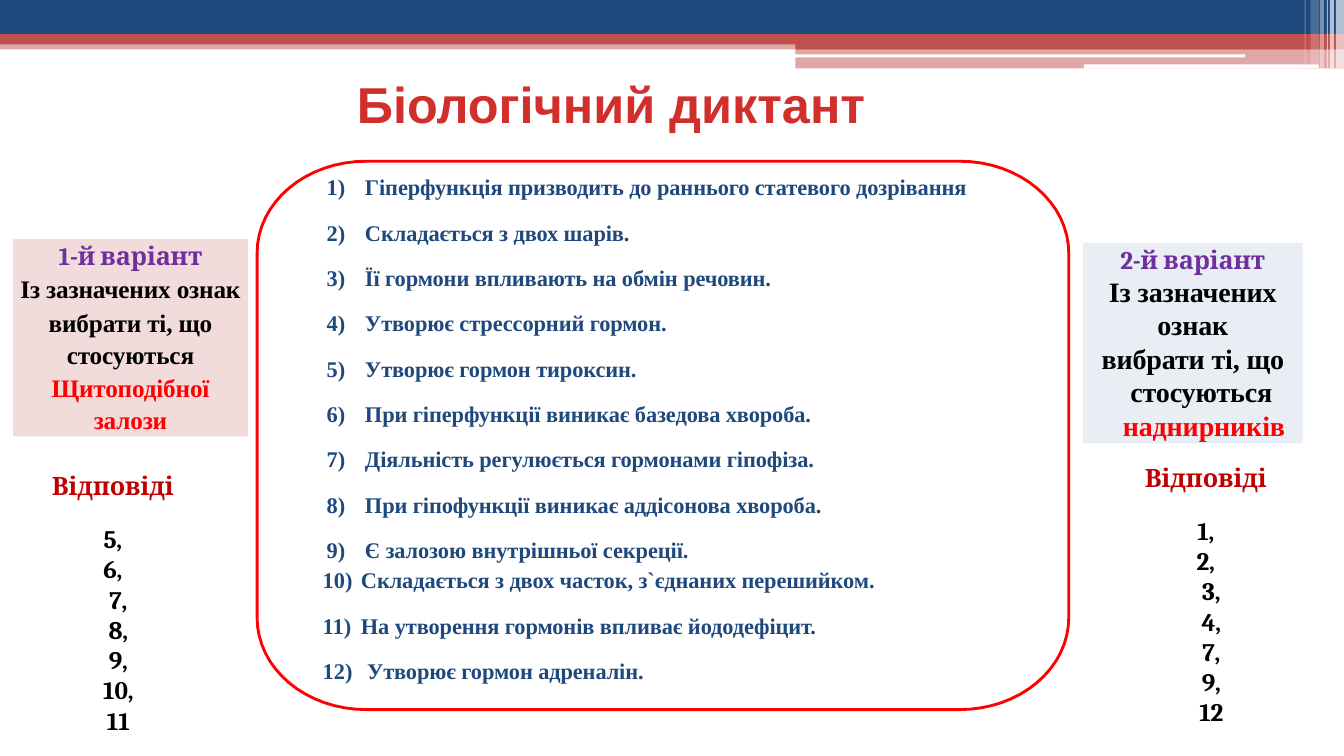
"""Build the biology dictation slide with two variants and their answers."""
from math import cos, pi, sin

from lxml.etree import SubElement
from pptx import Presentation
from pptx.dml.color import RGBColor as RGB
from pptx.enum.shapes import MSO_SHAPE as SHAPE
from pptx.enum.text import MSO_ANCHOR as ANCHOR, PP_ALIGN as ALIGN
from pptx.oxml.ns import qn
from pptx.util import Inches, Pt

THEME = {
    "navy": "1F497D", "brick": "C0504D", "white": "FFFFFF", "black": "000000",
    "red": "FF0000", "title": "D02F2C", "violet": "6F2F9F", "answer": "C00000",
    "pink": "F2DCDB", "ice": "E9EDF4",
    "serif": "Times New Roman", "cambria": "Cambria", "sans": "Arial",
    "big": 36, "mid": 20, "body": 18, "small": 16,
}

TITLE = "Біологічний диктант"
STATEMENTS = [
    "Гіперфункція призводить до раннього статевого дозрівання",
    "Складається з двох шарів.",
    "Її гормони впливають на обмін речовин.",
    "Утворює стрессорний гормон.",
    "Утворює гормон тироксин.",
    "При гіперфункції виникає базедова хвороба.",
    "Діяльність регулюється гормонами гіпофіза.",
    "При гіпофункції виникає аддісонова хвороба.",
    "Є залозою внутрішньої секреції.",
    "Складається з двох часток, з`єднаних перешийком.",
    "На утворення гормонів впливає йододефіцит.",
    "Утворює гормон адреналін.",
]
LISTS = [(1, 9, (3.23, 1.71, 7.19, 3.9)), (10, 12, (3.19, 5.61, 6.19, 1.19))]

VARIANTS = [
    {"name": "1-й варіант", "box": (0.13, 2.37, 2.33, 1.96), "fill": "pink", "size": "body",
     "task": [("Із зазначених ознак", 24, 0), ("вибрати ті, що", 24, 0), ("стосуються", 23.2, 0)],
     "gland": [("Щитоподібної", 23.2, 0), ("залози", 23.2, 0)],
     "answers": ["5,", "6,", "7,", "8,", "9,", "10,", "11"],
     "answer_box": (0.41, 4.62, 1.42, 2.7)},
    {"name": "2-й варіант", "box": (10.74, 2.41, 2.18, 1.99), "fill": "ice", "size": "mid",
     "task": [("Із зазначених", 23.9, 0), ("ознак", None, 0), ("вибрати ті, що", None, 0),
              ("стосуються", None, 0.17)],
     "gland": [("наднирників", None, 0.22)],
     "answers": ["1,", "2,", "3,", "4,", "7,", "9,", "12"],
     "answer_box": (11.25, 4.54, 1.42, 2.7)},
]

BARS = [
    (SHAPE.RECTANGLE, (0, 0.4, 13.33, 0.09), "brick", 50),
    (SHAPE.RECTANGLE, (0, 0, 13.33, 0.34), "navy", 100),
    (SHAPE.RECTANGLE, (0, 0.34, 13.33, 0.1), "brick", 100),
    (SHAPE.RECTANGLE, (7.89, 0.39, 5.44, 0.1), "brick", 100),
    (SHAPE.RECTANGLE, (7.89, 0.48, 5.44, 0.2), "brick", 50),
    (SHAPE.ROUNDED_RECTANGLE, (7.88, 0.54, 4.47, 0.03), "white", 100),
    (SHAPE.ROUNDED_RECTANGLE, (10.75, 0.64, 2.33, 0.04), "white", 100),
]
STRIPES = [(13.25, 0.08, 0.68, 65), (13.19, 0.04, 0.68, 65), (13.16, 0.01, 0.68, 60),
           (13.09, 0.04, 0.68, 40), (13, 0.08, 0.64, 20), (12.94, 0.01, 0.64, 30)]
FRAME = (2.55, 1.6, 8.05, 5.44)
CORNER = (1.08, 0.91)


def color(name):
    return RGB.from_string(THEME[name])


def add_bar(slide, kind, box, fill, alpha=100):
    sp = slide.shapes.add_shape(kind, *map(Inches, box))
    sp.shadow.inherit = False
    sp.fill.solid()
    sp.fill.fore_color.rgb = color(fill)
    sp.line.fill.background()
    if alpha < 100:
        clr = sp.fill._xPr.find(".//" + qn("a:srgbClr"))
        SubElement(clr, qn("a:alpha")).set("val", str(alpha * 1000))
    return sp


def add_frame(slide):
    x, y, w, h = FRAME
    rx, ry = CORNER
    centers = [(x + w - rx, y + h - ry), (x + rx, y + h - ry),
               (x + rx, y + ry), (x + w - rx, y + ry)]
    steps = 16
    points = [(Inches(cx + rx * cos(a)), Inches(cy + ry * sin(a)))
              for q, (cx, cy) in enumerate(centers)
              for a in ((q + i / steps) * pi / 2 for i in range(steps + 1))]
    builder = slide.shapes.build_freeform(*points[0])
    builder.add_line_segments(points[1:], close=True)
    sp = builder.convert_to_shape()
    sp.shadow.inherit = False
    sp.fill.solid()
    sp.fill.fore_color.rgb = color("white")
    sp.line.color.rgb = color("red")
    sp.line.width = Pt(2.04)


def open_frame(sp, wrap=True):
    tf = sp.text_frame
    tf.word_wrap = wrap
    tf.vertical_anchor = ANCHOR.TOP
    tf.margin_left = tf.margin_right = tf.margin_bottom = 0
    tf.margin_top = Inches(0.01)
    return tf


def add_box(slide, box, wrap=True):
    return open_frame(slide.shapes.add_textbox(*map(Inches, box)), wrap)


def write(tf, text, *, size="body", font="cambria", fill="black", align=ALIGN.CENTER,
          before=0, line=None, left=0, hang=0, start=None, spacing=-0.1):
    p = tf.paragraphs[0]
    if p.runs:
        p = tf.add_paragraph()
    p.alignment = align
    p.space_before = Pt(before)
    if line:
        p.line_spacing = Pt(line)
    pPr = p._p.get_or_add_pPr()
    pPr.set("marL", str(Inches(left)))
    pPr.set("indent", str(Inches(-hang)))
    if start:
        bullet = SubElement(pPr, qn("a:buAutoNum"))
        bullet.set("type", "arabicParenR")
        bullet.set("startAt", str(start))
    r = p.add_run()
    r.text = text
    r.font.size = Pt(THEME[size])
    r.font.name = THEME[font]
    r.font.bold = True
    r.font.color.rgb = color(fill)
    r._r.get_or_add_rPr().set("spc", str(round(spacing * 100)))


def add_variant(slide, variant):
    tf = open_frame(add_bar(slide, SHAPE.RECTANGLE, variant["box"], variant["fill"]))
    write(tf, variant["name"], fill="violet", line=21.6, before=1)
    for part, fill in (("task", "black"), ("gland", "red")):
        for text, line, left in variant[part]:
            write(tf, text, size=variant["size"], font="serif", fill=fill, line=line, left=left)
    tf = add_box(slide, variant["answer_box"])
    write(tf, "Відповіді", fill="answer", line=23.9, before=1.1)
    for i, answer in enumerate(variant["answers"]):
        write(tf, answer, line=None if i else 38.2, left=0.11 if i > 1 else 0)


def main():
    prs = Presentation()
    prs.slide_width, prs.slide_height = Inches(13.33), Inches(7.5)
    slide = prs.slides.add_slide(prs.slide_layouts[6])
    for bar in BARS:
        add_bar(slide, *bar)
    for x, w, h, alpha in STRIPES:
        add_bar(slide, SHAPE.RECTANGLE, (x, 0, w, h), "white", alpha)
    add_frame(slide)
    for first, last, box in LISTS:
        tf = add_box(slide, box)
        for n in range(first, last + 1):
            left = 0.45 if n == len(STATEMENTS) else 0.39
            write(tf, STATEMENTS[n - 1], size="small", font="serif", fill="navy",
                  align=ALIGN.LEFT, before=1 if n == first else 13.2,
                  left=left, hang=left - 0.01, start=first, spacing=-0.05)
    for variant in VARIANTS:
        add_variant(slide, variant)
    tf = add_box(slide, (3.54, 0.72, 5.1, 0.63), wrap=False)
    write(tf, TITLE, size="big", font="sans", fill="title", align=ALIGN.LEFT, spacing=0)
    prs.save("out.pptx")


if __name__ == "__main__":
    main()
